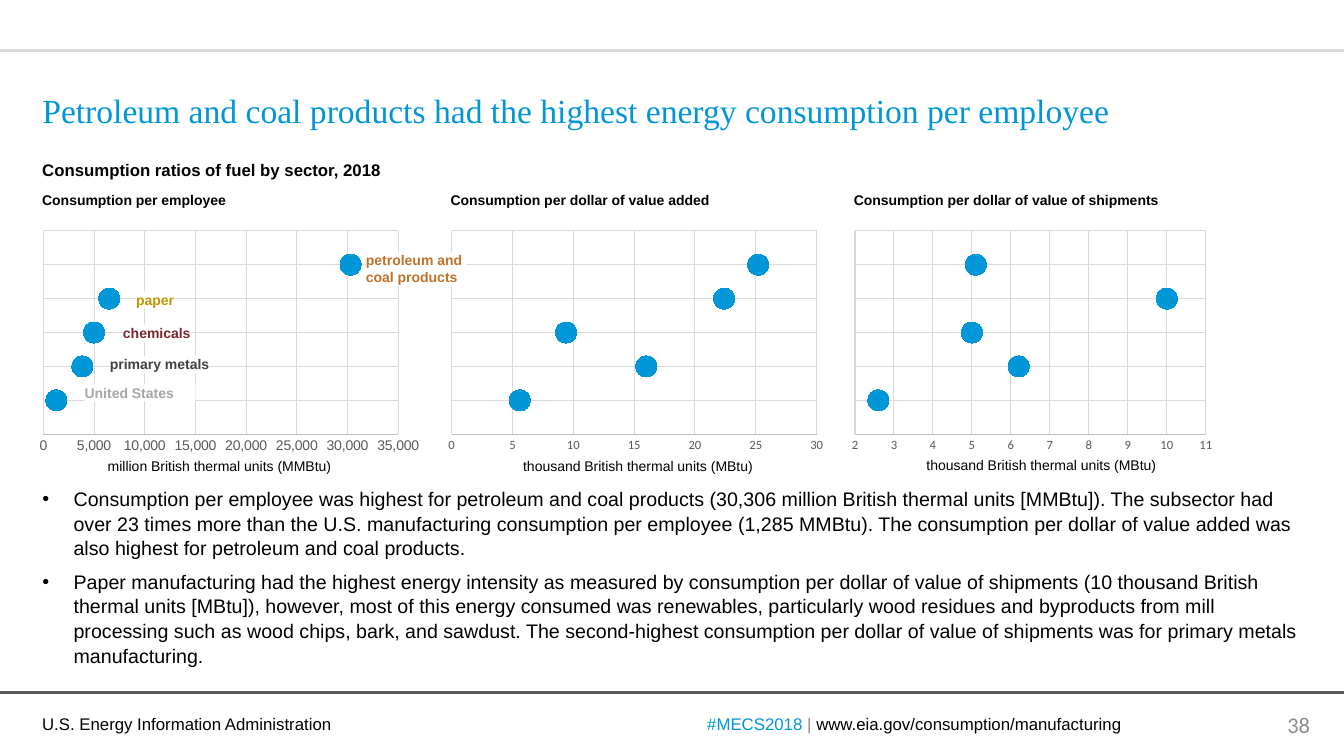
from lxml.etree import SubElement
from pptx import Presentation
from pptx.chart.data import XyChartData
from pptx.dml.color import RGBColor
from pptx.enum.chart import XL_CHART_TYPE as ChartType, XL_MARKER_STYLE as Marker, XL_TICK_MARK as Tick
from pptx.enum.shapes import MSO_CONNECTOR as Connector, MSO_SHAPE as Shape
from pptx.enum.text import MSO_ANCHOR as Anchor, MSO_AUTO_SIZE as AutoSize, PP_ALIGN as Align
from pptx.oxml.ns import qn
from pptx.util import Inches, Pt


def rgb(code):
    return RGBColor.from_string(code)


class Deck:
    BLUE, BLACK, GRID, GREY = "0096D7", "000000", "D9D9D9", "8C8C8C"

    def __init__(self):
        self.prs = Presentation()
        self.prs.slide_width, self.prs.slide_height = Inches(13.33), Inches(7.5)
        self.slide = self.prs.slides.add_slide(self.prs.slide_layouts[1])

    def style(self, paragraph, size, color, bold=False, font="Arial", align=Align.LEFT):
        paragraph.alignment = align
        paragraph.font.size = Pt(size)
        paragraph.font.name = font
        paragraph.font.bold = bold
        paragraph.font.color.rgb = rgb(color)

    def place(self, shape, left, top, width, height):
        shape.left, shape.top = Inches(left), Inches(top)
        shape.width, shape.height = Inches(width), Inches(height)

    def rule(self, top, color):
        line = self.slide.shapes.add_connector(
            Connector.STRAIGHT, 0, Inches(top), self.prs.slide_width, Inches(top))
        line.line.color.rgb = rgb(color)
        line.line.width = Pt(2.25)
        SubElement(line._element.spPr, qn("a:effectLst"))

    def title(self, text, *box):
        title = self.slide.shapes.title
        self.place(title, *box)
        frame = title.text_frame
        frame.text = text
        frame.auto_size = AutoSize.NONE
        frame.vertical_anchor = Anchor.BOTTOM
        self.style(frame.paragraphs[0], 24, self.BLUE, font="Times New Roman")

    def bullets(self, items, *box):
        body = self.slide.placeholders[1]
        self.place(body, *box)
        frame = body.text_frame
        frame.text = "\n".join(items)
        frame.auto_size = AutoSize.NONE
        for paragraph in frame.paragraphs:
            self.style(paragraph, 14, self.BLACK)
            paragraph.space_before, paragraph.space_after = Pt(0), Pt(6)
            paragraph.line_spacing = 1.05
            properties = paragraph._p.get_or_add_pPr()
            properties.set("marL", str(Inches(0.31)))
            properties.set("indent", str(-Inches(0.31)))

    def text(self, parts, *box, size=10, bold=False, font="Arial", align=Align.LEFT, anchor=Anchor.TOP):
        frame = self.slide.shapes.add_textbox(*map(Inches, box)).text_frame
        frame.word_wrap = True
        frame.vertical_anchor = anchor
        paragraph = frame.paragraphs[0]
        self.style(paragraph, size, parts[0][1], bold, font, align)
        for words, color in parts:
            run = paragraph.add_run()
            run.text = words
            run.font.color.rgb = rgb(color)

    def label(self, text, color, *box):
        tag = self.slide.shapes.add_shape(Shape.RECTANGLE, *map(Inches, box))
        tag.shadow.inherit = False
        tag.fill.solid()
        tag.fill.fore_color.rgb = rgb("FFFFFF")
        tag.line.fill.background()
        frame = tag.text_frame
        frame.margin_left = frame.margin_right = frame.margin_top = frame.margin_bottom = 0
        frame.word_wrap = False
        frame.vertical_anchor = Anchor.TOP
        frame.text = text
        for paragraph in frame.paragraphs:
            self.style(paragraph, 10, color, bold=True)

    def scale(self, axis, low, high, step):
        axis.minimum_scale, axis.maximum_scale, axis.major_unit = low, high, step
        axis.has_major_gridlines = True
        axis.major_gridlines.format.line.color.rgb = rgb(self.GRID)
        axis.major_gridlines.format.line.width = Pt(0.75)
        axis.major_tick_mark = axis.minor_tick_mark = Tick.NONE

    def scatter(self, values, span, left, width, plot_width, size, font):
        top, height = 2.24, 2.3
        data = XyChartData()
        points = data.add_series("Series 1")
        for rank, value in enumerate(values):
            points.add_data_point(value, 100 - 20 * rank)
        chart = self.slide.shapes.add_chart(
            ChartType.XY_SCATTER, *map(Inches, (left, top, width, height)), data).chart
        chart.has_legend = chart.has_title = False
        chart.font.size, chart.font.name = Pt(10), "Calibri"
        chart.font.color.rgb = rgb(self.BLACK)
        plot = chart.plots[0]
        plot.vary_by_categories = False
        dots = plot.series[0]
        dots.format.line.fill.background()
        dots.marker.style, dots.marker.size = Marker.CIRCLE, 15
        dots.marker.format.fill.solid()
        dots.marker.format.fill.fore_color.rgb = rgb(self.BLUE)
        dots.marker.format.line.color.rgb = rgb(self.BLUE)
        ratio, rows = chart.category_axis, chart.value_axis
        self.scale(ratio, *span)
        self.scale(rows, 0, 120, 20)
        rows.visible = False
        ratio.format.line.color.rgb = rgb("BFBFBF")
        ratio.format.line.width = Pt(0.75)
        labels = ratio.tick_labels
        labels.number_format, labels.number_format_is_linked = "#,##0", False
        labels.font.size, labels.font.name = Pt(size), font
        labels.font.color.rgb = rgb("595959")
        self.plot_layout(chart, 0.11 / width, 0.05 / height, plot_width / width, 2.02 / height)

    def plot_layout(self, chart, x, y, w, h):
        area = chart._chartSpace.chart.plotArea
        for old in area.findall(qn("c:layout")):
            area.remove(old)
        layout = SubElement(area, qn("c:layout"))
        area.insert(0, layout)
        manual = SubElement(layout, qn("c:manualLayout"))
        settings = [("layoutTarget", "inner"), ("xMode", "edge"), ("yMode", "edge"),
                    ("x", x), ("y", y), ("w", w), ("h", h)]
        for name, value in settings:
            SubElement(manual, qn("c:" + name)).set("val", str(value))


def main():
    deck = Deck()
    black = deck.BLACK
    deck.rule(6.87, "595959")
    deck.rule(0.5, deck.GRID)
    deck.title("Petroleum and coal products had the highest energy consumption per employee",
               0.32, 0.51, 12.69, 0.83)
    deck.text([("Consumption ratios of fuel by sector, 2018", black)], 0.32, 1.54, 6.85, 0.3, size=12, bold=True)

    panels = [
        ("Consumption per employee", "million British thermal units (MMBtu)", 0.97, 4.49,
         (30306, 6500, 5000, 3850, 1285), (0, 35000, 5000), 0.32, 3.92, 3.52, 10, "Arial"),
        ("Consumption per dollar of value added", "thousand British thermal units (MBtu)", 5.09, 4.49,
         (25.2, 22.4, 9.4, 16, 5.6), (0, 30, 5), 4.37, 3.87, 3.62, 9, "Calibri"),
        ("Consumption per dollar of value of shipments", "thousand British thermal units (MBtu)", 9.09, 4.48,
         (5.1, 10, 5, 6.2, 2.6), (2, 11, 1), 8.37, 3.72, 3.48, 9, "Calibri"),
    ]
    for heading, unit, unit_left, unit_top, values, span, left, *sizes in panels:
        deck.scatter(values, span, left, *sizes)
        deck.text([(heading, black)], left, 1.85, 3.34, 0.27, bold=True)
        deck.text([(unit, black)], unit_left, unit_top, 3.15, 0.27)

    sectors = [
        ("United States", "A6A6A6", 0.84, 3.81, 1.1, 0.17),
        ("petroleum and\ncoal products", "BD732A", 3.63, 2.5, 1, 0.34),
        ("paper", "C19600", 1.35, 2.89, 0.38, 0.17),
        ("chemicals", "7A2630", 1.22, 3.22, 0.67, 0.17),
        ("primary metals", "404040", 1.09, 3.53, 0.99, 0.17),
    ]
    for sector in sectors:
        deck.label(*sector)

    deck.bullets([
        "Consumption per employee was highest for petroleum and coal products (30,306 million British thermal "
        "units [MMBtu]). The subsector had over 23 times more than the U.S. manufacturing consumption per "
        "employee (1,285 MMBtu). The consumption per dollar of value added was also highest for petroleum and "
        "coal products.",
        "Paper manufacturing had the highest energy intensity as measured by consumption per dollar of value of "
        "shipments (10 thousand British thermal units [MBtu]), however, most of this energy consumed was "
        "renewables, particularly wood residues and byproducts from mill processing such as wood chips, bark, "
        "and sawdust. The second-highest consumption per dollar of value of shipments was for primary metals "
        "manufacturing.",
    ], 0.32, 4.77, 12.69, 1.83)

    deck.text([("U.S. Energy Information Administration", black)], 0.32, 7.03, 3.7, 0.3, size=12)
    deck.text([("#MECS2018 ", deck.BLUE), ("| ", deck.GREY), ("www.eia.gov/consumption/manufacturing", black)],
              6.82, 6.98, 4.5, 0.4, size=12, align=Align.CENTER, anchor=Anchor.MIDDLE)
    deck.text([("38", deck.GREY)], 12.58, 6.99, 0.6, 0.4, size=16, font="Calibri",
              align=Align.CENTER, anchor=Anchor.MIDDLE)
    deck.prs.save("out.pptx")


if __name__ == "__main__":
    main()
